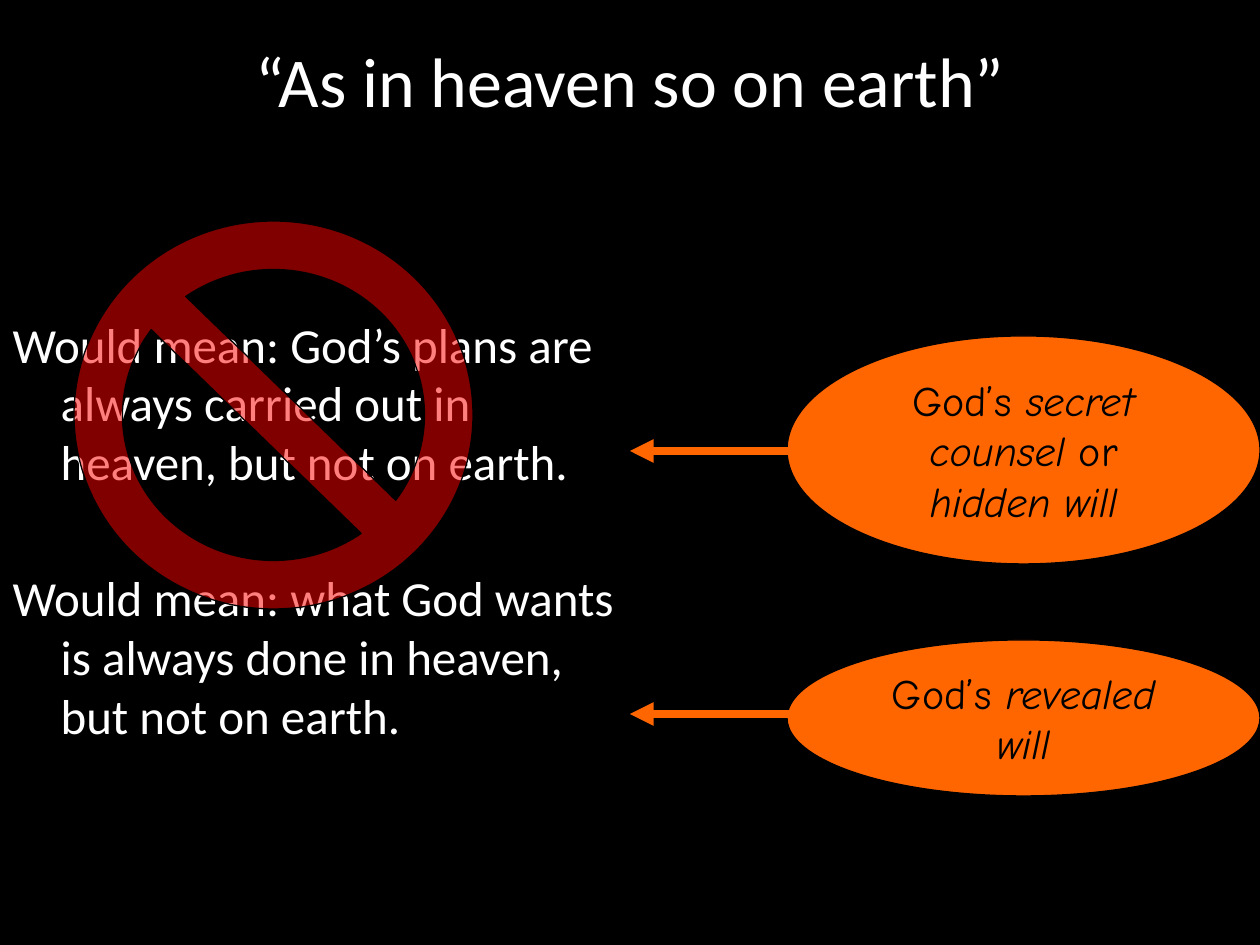
from lxml import etree
from pptx import Presentation
from pptx import util as u
from pptx.dml.color import RGBColor
from pptx.enum import shapes, text
from pptx.oxml.ns import qn

SCALE = 914400 // 126  # EMU in one px
BLACK, WHITE, ORANGE, RED = "000000", "FFFFFF", "FF6600", "FF0000"


def px(length):
    return u.Emu(length * SCALE)


def paint(color_format, color):
    color_format.rgb = RGBColor.from_string(color)


def place(shape, left, top, width, height):
    shape.left, shape.top = px(left), px(top)
    shape.width, shape.height = px(width), px(height)


def add_run(paragraph, words, size, font, color, italic=None):
    run = paragraph.add_run()
    run.text = words
    run.font.size, run.font.name, run.font.italic = u.Pt(size), font, italic
    paint(run.font.color, color)


def fill_title(title, words):
    place(title, 0, 0, 1260, 158)
    title.text_frame.vertical_anchor = text.MSO_ANCHOR.MIDDLE
    paragraph = title.text_frame.paragraphs[0]
    paragraph.alignment = text.PP_ALIGN.CENTER
    add_run(paragraph, words, 40, "Calibri", WHITE)


def fill_body(body, meanings):
    place(body, 0, 168, 630, 777)
    frame = body.text_frame
    frame.auto_size = text.MSO_AUTO_SIZE.NONE
    frame.vertical_anchor = text.MSO_ANCHOR.TOP
    frame.margin_top = px(146)
    for index, words in enumerate(meanings):
        paragraph = frame.add_paragraph() if index else frame.paragraphs[0]
        paragraph.space_before = u.Pt(44 if index else 0)
        properties = paragraph._p.get_or_add_pPr()
        properties.set("marL", str(px(48)))
        properties.set("indent", str(px(-48)))
        etree.SubElement(properties, qn("a:buNone"))
        add_run(paragraph, words, 28, "Calibri", WHITE)


def add_outlined(slide, preset, box, color):
    shape = slide.shapes.add_shape(preset, *map(px, box))
    shape.shadow.inherit = False
    shape.fill.solid()
    paint(shape.fill.fore_color, color)
    paint(shape.line.color, BLACK)
    shape.line.width = u.Pt(0.75)
    return shape


def add_ellipse(slide, top, height, runs):
    ellipse = add_outlined(slide, shapes.MSO_SHAPE.OVAL, (787, top, 473, height), ORANGE)
    frame = ellipse.text_frame
    frame.word_wrap = True
    frame.vertical_anchor = text.MSO_ANCHOR.MIDDLE
    paragraph = frame.paragraphs[0]
    paragraph.alignment = text.PP_ALIGN.CENTER
    for words, italic in runs:
        add_run(paragraph, words, 24, "Comic Neue", BLACK, italic)


def add_arrow(slide, y):
    arrow = slide.shapes.add_connector(
        shapes.MSO_CONNECTOR.STRAIGHT, px(798), px(y), px(630), px(y))
    paint(arrow.line.color, ORANGE)
    arrow.line.width = u.Pt(4.5)
    etree.SubElement(arrow.line._get_or_add_ln(), qn("a:tailEnd"), type="triangle")
    etree.SubElement(arrow._element.spPr, qn("a:effectLst"))


def add_prohibition(slide):
    sign = add_outlined(slide, shapes.MSO_SHAPE.NO_SYMBOL, (74, 221, 399, 388), RED)
    sign.adjustments[0] = 0.125
    color = sign.fill._xPr.find(qn("a:solidFill"))[0]
    etree.SubElement(color, qn("a:alpha"), val="50000")


def main():
    presentation = Presentation()
    presentation.slide_width, presentation.slide_height = px(1260), px(945)
    slide = presentation.slides.add_slide(presentation.slide_layouts[1])
    slide.background.fill.solid()
    paint(slide.background.fill.fore_color, BLACK)

    # Title and the two readings
    fill_title(slide.shapes.title, "“As in heaven so on earth”")
    fill_body(slide.placeholders[1], [
        "Would mean: God’s plans are always carried out in heaven, but not on earth.",
        "Would mean: what God wants is always done in heaven, but not on earth.",
    ])

    # The two kinds of will, each pointing to its reading
    add_ellipse(slide, 640, 156, [("God’s ", False), ("revealed will", True)])
    add_ellipse(slide, 336, 228, [("God’s ", False), ("secret counsel ", True),
                                  ("or ", False), ("hidden will", True)])
    for y in (451, 714):
        add_arrow(slide, y)

    # The first reading is ruled out
    add_prohibition(slide)
    presentation.save("out.pptx")


if __name__ == "__main__":
    main()
